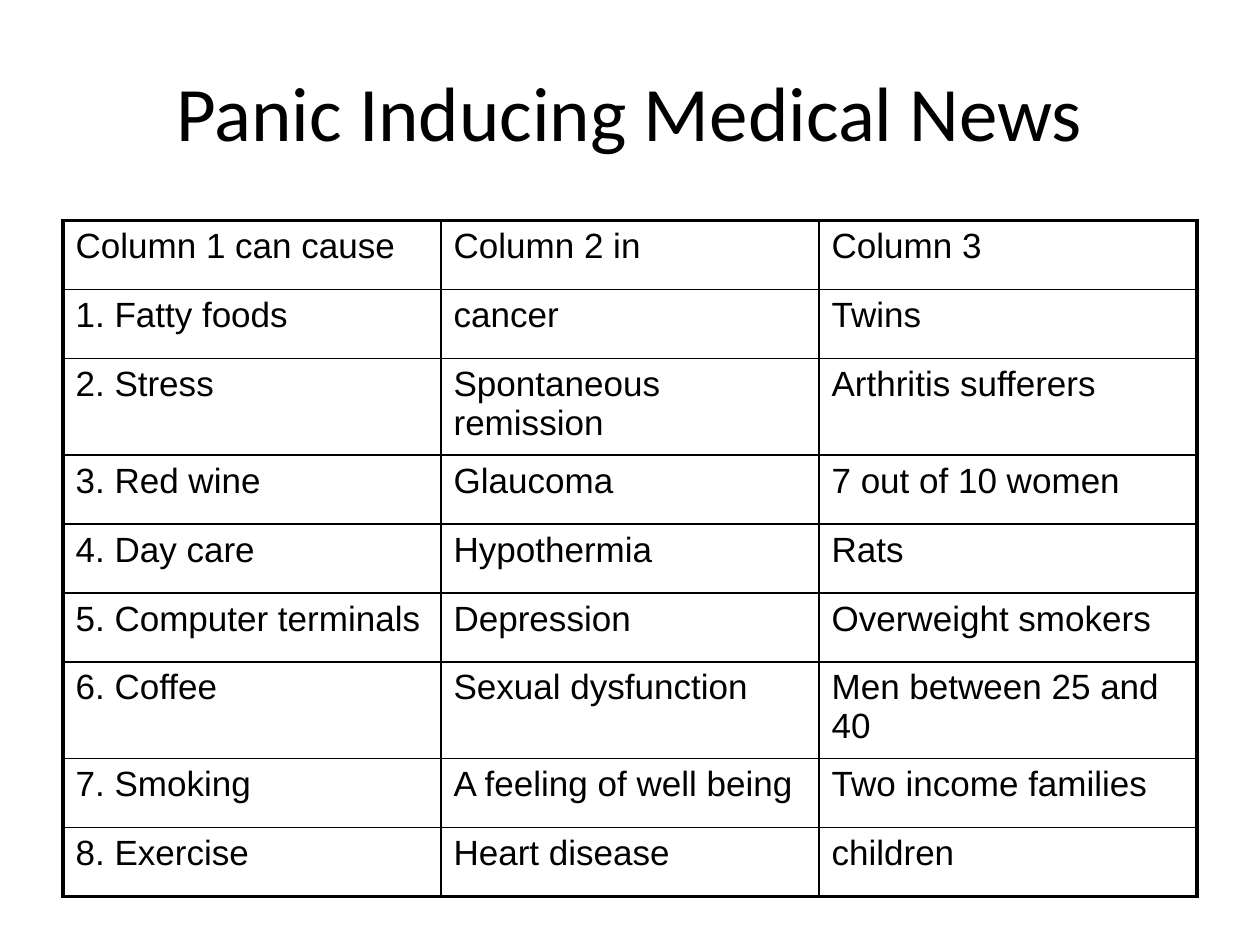
from lxml.etree import SubElement
from pptx import Presentation
from pptx.dml.color import RGBColor
from pptx.enum.text import MSO_ANCHOR, PP_ALIGN
from pptx.oxml.ns import qn
from pptx.util import Cm, Pt

TITLE = "Panic Inducing Medical News"
HEADINGS = ("Column 1 can cause", "Column 2 in", "Column 3")
NEWS = [
    ("Fatty foods", "cancer", "Twins"),
    ("Stress", "Spontaneous remission", "Arthritis sufferers"),
    ("Red wine", "Glaucoma", "7 out of 10 women"),
    ("Day care", "Hypothermia", "Rats"),
    ("Computer terminals", "Depression", "Overweight smokers"),
    ("Coffee", "Sexual dysfunction", "Men between 25 and 40"),
    ("Smoking", "A feeling of well being", "Two income families"),
    ("Exercise", "Heart disease", "children"),
]
INK = "000000"
MARGIN, CONTENT_WIDTH = 1.27, 22.86
ROW_HEIGHT = 1.39
OUTER, INNER = 2.25, 1


def color(value):
    return RGBColor.from_string(value)


def write(paragraph, text, font, size):
    run = paragraph.add_run()
    run.text = text
    run.font.name = font
    run.font.size = Pt(size)
    run.font.color.rgb = color(INK)


def add_borders(cell, widths):
    """Draw the cell's sides, given in the order left, right, top, bottom."""
    properties = cell._tc.get_or_add_tcPr()
    for side, width in zip("LRTB", widths):
        line = SubElement(properties, qn(f"a:ln{side}"), w=str(Pt(width)))
        fill = SubElement(line, qn("a:solidFill"))
        SubElement(fill, qn("a:srgbClr"), val=INK)


presentation = Presentation()
presentation.slide_width, presentation.slide_height = Cm(25.4), Cm(19.05)
slide = presentation.slides.add_slide(presentation.slide_layouts[6])

# Title
title = slide.shapes.add_textbox(
    Cm(MARGIN), Cm(0.64), Cm(CONTENT_WIDTH), Cm(3.18)).text_frame
title.word_wrap = True
title.vertical_anchor = MSO_ANCHOR.MIDDLE
title.paragraphs[0].alignment = PP_ALIGN.CENTER
write(title.paragraphs[0], TITLE, "Calibri", 44)

# Table of causes, effects and victims
rows = [HEADINGS] + [
    (f"{number}. {cause}", effect, victim)
    for number, (cause, effect, victim) in enumerate(NEWS, 1)
]
last_row, last_column = len(rows) - 1, len(HEADINGS) - 1
news_table = slide.shapes.add_table(
    len(rows), len(HEADINGS), Cm(MARGIN), Cm(4.45),
    Cm(CONTENT_WIDTH), Cm(ROW_HEIGHT * len(rows))).table
news_table.first_row = news_table.horz_banding = False

for r, row in enumerate(rows):
    news_table.rows[r].height = Cm(ROW_HEIGHT)
    for c, text in enumerate(row):
        cell = news_table.cell(r, c)
        edges = (c == 0, c == last_column, r == 0, r == last_row)
        add_borders(cell, [OUTER if edge else INNER for edge in edges])
        cell.fill.background()
        write(cell.text_frame.paragraphs[0], text, "Arial", 20)

presentation.save("out.pptx")
